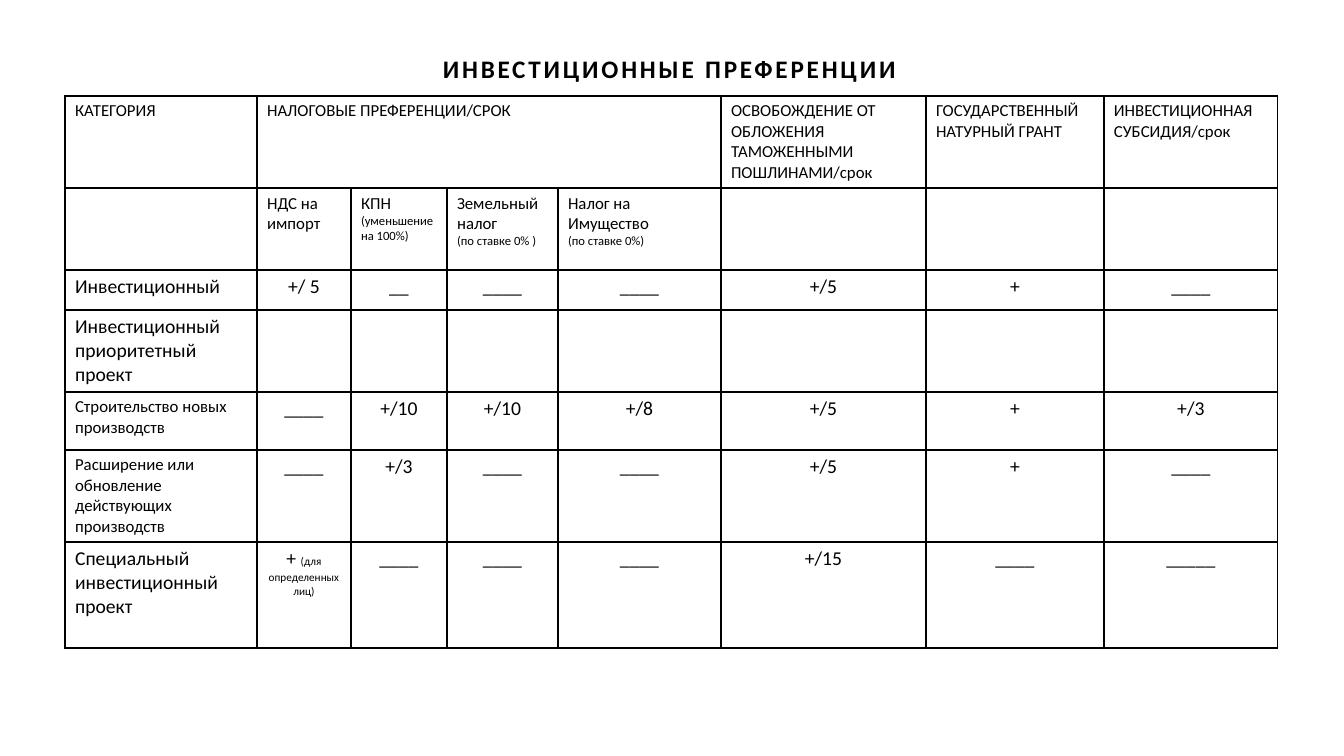
from dataclasses import dataclass

from lxml import etree
from pptx import Presentation
from pptx.dml.color import RGBColor
from pptx.enum.text import MSO_AUTO_SIZE, PP_ALIGN
from pptx.oxml.ns import qn
from pptx.slide import Slide
from pptx.table import Table, _Cell
from pptx.text.text import _Paragraph
from pptx.util import Emu, Pt

SLIDE_WIDTH, SLIDE_HEIGHT = 1344, 756
EMU_PER_PX = 12192000 / SLIDE_WIDTH
BLACK = RGBColor(0x00, 0x00, 0x00)
WHITE = RGBColor(0xFF, 0xFF, 0xFF)
FONT = "Calibri"
LEFT, CENTER = PP_ALIGN.LEFT, PP_ALIGN.CENTER
FIT_SHAPE = MSO_AUTO_SIZE.SHAPE_TO_FIT_TEXT
BORDER_TAGS = ("a:lnL", "a:lnR", "a:lnT", "a:lnB")
DASH = "____"
HEADER_ROWS = 2
TAX_COLUMNS = (1, 4)
TABLE_LEFT, TABLE_TOP = 65, 96
COLUMN_WIDTHS = (192, 94, 96, 111, 163, 205, 178, 174)
ROW_HEIGHTS = (92, 82, 40, 82, 58, 92, 106)


@dataclass(frozen=True)
class Piece:
    text: str
    size: int


@dataclass(frozen=True)
class Entry:
    paragraphs: tuple[tuple[Piece, ...], ...]


def entry(text: str, size: int) -> Entry:
    return Entry(((Piece(text, size),),))


def marks(category: str, size: int, *values: str) -> list[Entry]:
    return [entry(category, size)] + [entry(value, 14) for value in values]


EMPTY = Entry(())
ROWS = [
    [
        entry("КАТЕГОРИЯ", 12),
        entry("НАЛОГОВЫЕ ПРЕФЕРЕНЦИИ/СРОК", 12),
        EMPTY,
        EMPTY,
        EMPTY,
        entry("ОСВОБОЖДЕНИЕ ОТ ОБЛОЖЕНИЯ ТАМОЖЕННЫМИ ПОШЛИНАМИ/срок", 12),
        entry("ГОСУДАРСТВЕННЫЙ НАТУРНЫЙ ГРАНТ", 12),
        entry("ИНВЕСТИЦИОННАЯ СУБСИДИЯ/срок", 12),
    ],
    [
        EMPTY,
        entry("НДС на импорт", 12),
        Entry(((Piece("КПН ", 12), Piece("(уменьшение на 100%)", 9)),)),
        Entry(((Piece("Земельный налог", 12),), (Piece("(по ставке 0% )", 9),))),
        Entry(((Piece("Налог на Имущество", 12),), (Piece("(по ставке 0%)", 9),))),
        EMPTY,
        EMPTY,
        EMPTY,
    ],
    marks("Инвестиционный", 14, "+/ 5", "__", DASH, DASH, "+/5", "+", DASH),
    [entry("Инвестиционный приоритетный проект", 14)] + [EMPTY] * 7,
    marks("Строительство новых производств", 12, DASH, "+/10", "+/10", "+/8", "+/5", "+", "+/3"),
    marks("Расширение или обновление действующих производств", 12, DASH, "+/3", DASH, DASH, "+/5", "+", DASH),
    [
        entry("Специальный инвестиционный проект", 14),
        Entry(((Piece("+ ", 14), Piece("(для определенных лиц)", 8)),)),
        *(entry(value, 14) for value in (DASH, DASH, DASH, "+/15", DASH, "_____")),
    ],
]


def px(length: int) -> Emu:
    return Emu(round(length * EMU_PER_PX))


def add_run(paragraph: _Paragraph, piece: Piece, bold: bool = False, spacing: int = 0) -> None:
    run = paragraph.add_run()
    run.text = piece.text
    run.font.name = FONT
    run.font.size = Pt(piece.size)
    run.font.bold = bold
    run.font.color.rgb = BLACK
    if spacing:
        run._r.get_or_add_rPr().set("spc", str(spacing * 100))


def draw_borders(cell: _Cell) -> None:
    properties = cell._tc.get_or_add_tcPr()
    for tag in BORDER_TAGS:
        line = etree.SubElement(properties, qn(tag), w=str(Pt(1)))
        fill = etree.SubElement(line, qn("a:solidFill"))
        etree.SubElement(fill, qn("a:srgbClr"), val=str(BLACK))


def fill_cell(cell: _Cell, content: Entry, alignment: PP_ALIGN) -> None:
    draw_borders(cell)
    cell.fill.solid()
    cell.fill.fore_color.rgb = WHITE
    for index, pieces in enumerate(content.paragraphs):
        paragraph = cell.text_frame.add_paragraph() if index else cell.text_frame.paragraphs[0]
        paragraph.alignment = alignment
        for piece in pieces:
            add_run(paragraph, piece)


def size_table(table: Table) -> None:
    for column, width in zip(table.columns, COLUMN_WIDTHS):
        column.width = px(width)
    for row, height in zip(table.rows, ROW_HEIGHTS):
        row.height = px(height)


def add_preferences_table(slide: Slide) -> None:
    table = slide.shapes.add_table(
        len(ROW_HEIGHTS), len(COLUMN_WIDTHS),
        px(TABLE_LEFT), px(TABLE_TOP), px(sum(COLUMN_WIDTHS)), px(sum(ROW_HEIGHTS)),
    ).table
    table.first_row = False
    table.horz_banding = False
    size_table(table)
    for row_index, row in enumerate(ROWS):
        for column_index, content in enumerate(row):
            centered = row_index >= HEADER_ROWS and column_index > 0
            fill_cell(table.cell(row_index, column_index), content, CENTER if centered else LEFT)
    first, last = TAX_COLUMNS
    table.cell(0, first).merge(table.cell(0, last))


def add_title(slide: Slide) -> None:
    title = slide.shapes.add_textbox(px(433), px(48), px(478), px(40))
    frame = title.text_frame
    frame.word_wrap = False
    frame.auto_size = FIT_SHAPE
    add_run(frame.paragraphs[0], Piece("ИНВЕСТИЦИОННЫЕ ПРЕФЕРЕНЦИИ", 18), bold=True, spacing=2)


def main() -> None:
    presentation = Presentation()
    presentation.slide_width = px(SLIDE_WIDTH)
    presentation.slide_height = px(SLIDE_HEIGHT)
    slide = presentation.slides.add_slide(presentation.slide_layouts[6])
    add_preferences_table(slide)
    add_title(slide)
    presentation.save("out.pptx")


if __name__ == "__main__":
    main()
